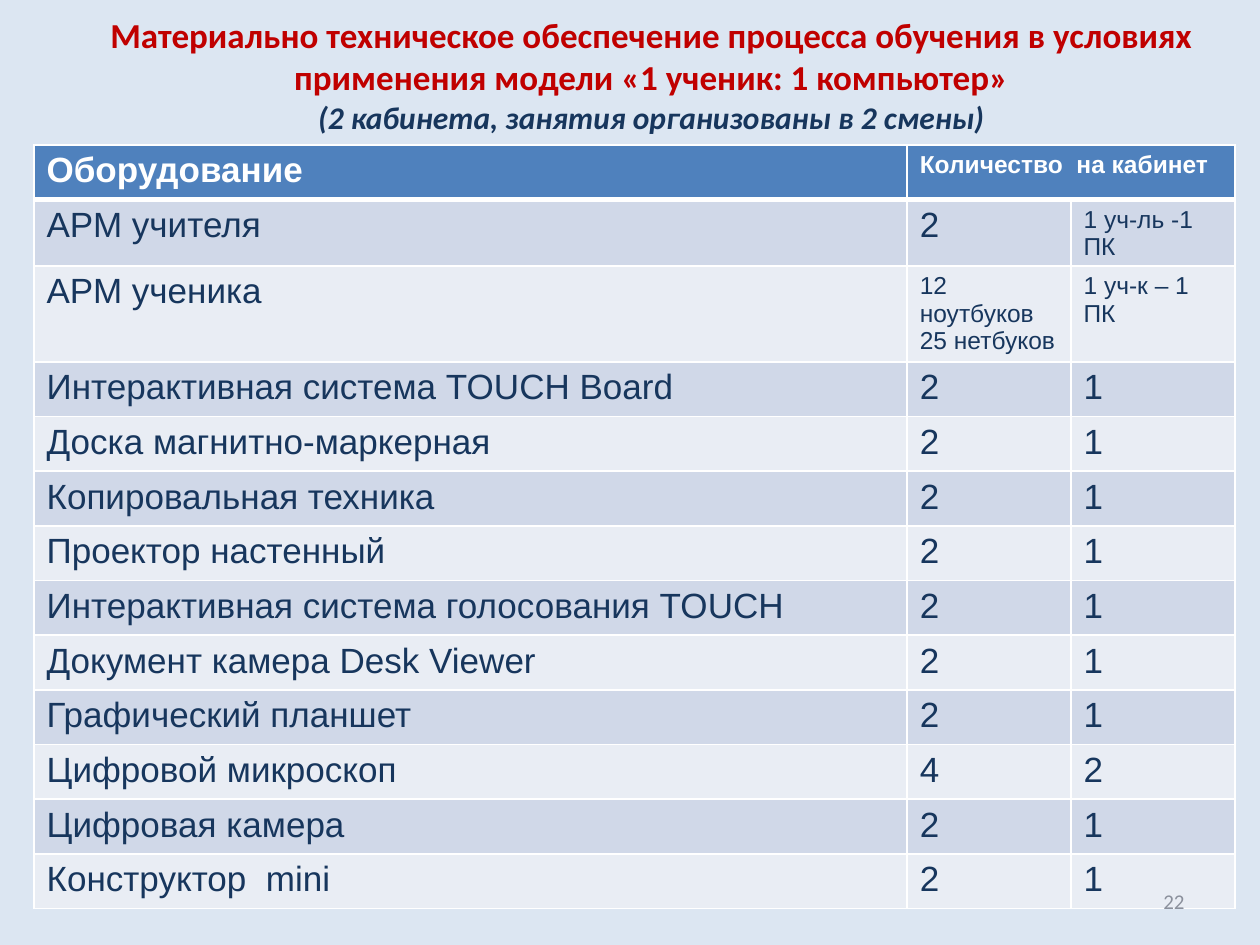
"""Builds the slide listing classroom equipment for the one pupil, one computer model."""
from lxml import etree
from pptx import Presentation
from pptx.dml.color import RGBColor
from pptx.enum.text import MSO_ANCHOR, PP_ALIGN
from pptx.oxml.ns import qn
from pptx.util import Inches, Pt

COLORS = {"backdrop": "DCE6F2", "heading": "C00000", "ink": "17365D", "header": "4F81BD",
          "odd": "D0D8E8", "even": "E9EDF4", "white": "FFFFFF", "number": "8B909C"}
EQUIPMENT = [
    ("Оборудование", "Количество  на кабинет", ""),
    ("АРМ учителя", "2", "1 уч-ль -1 ПК"),
    ("АРМ ученика", "12 ноутбуков\n25 нетбуков", "1 уч-к – 1 ПК"),
    ("Интерактивная система TOUCH Board", "2", "1"),
    ("Доска магнитно-маркерная", "2", "1"),
    ("Копировальная техника", "2", "1"),
    ("Проектор настенный", "2", "1"),
    ("Интерактивная система голосования TOUCH", "2", "1"),
    ("Документ камера Desk Viewer", "2", "1"),
    ("Графический планшет", "2", "1"),
    ("Цифровой микроскоп", "4", "2"),
    ("Цифровая камера", "2", "1"),
    ("Конструктор  mini", "2", "1"),
]
COLUMNS = [6.93, 1.3, 1.3]
ROWS = [0.57 if "\n" in amount else 0.43 for _, amount, _ in EQUIPMENT]


def write(paragraph, text, color, **formats):
    run = paragraph.add_run()
    run.text = text
    run.font.color.rgb = RGBColor.from_string(COLORS[color])
    for attribute, value in formats.items():
        setattr(run.font, attribute, value)


def add_caption(left, top, width, height, anchor):
    frame = slide.shapes.add_textbox(*map(Inches, (left, top, width, height))).text_frame
    settings = {"word_wrap": True, "vertical_anchor": anchor, "margin_top": 0, "margin_bottom": 0}
    for attribute, value in settings.items():
        setattr(frame, attribute, value)
    return frame


deck = Presentation()
deck.slide_width, deck.slide_height = Inches(10), Inches(7.5)
slide = deck.slides.add_slide(deck.slide_layouts[6])
slide.background.fill.solid()
slide.background.fill.fore_color.rgb = RGBColor.from_string(COLORS["backdrop"])

title = add_caption(0.67, 0.11, 9, 1, MSO_ANCHOR.TOP)
heading, subtitle = title.paragraphs[0], title.add_paragraph()
heading.alignment = subtitle.alignment = PP_ALIGN.CENTER
write(heading, "Материально техническое обеспечение процесса обучения в условиях "
      "применения модели «1 ученик: 1 компьютер»", "heading",
      name="Calibri", size=Pt(20), bold=True)
write(subtitle, "(2 кабинета, занятия организованы в 2 смены)", "ink",
      name="Calibri", size=Pt(18), bold=True, italic=True)

table = slide.shapes.add_table(
    len(ROWS), len(COLUMNS), Inches(0.27), Inches(1.15),
    Inches(sum(COLUMNS)), Inches(sum(ROWS))).table
for column, width in zip(table.columns, COLUMNS):
    column.width = Inches(width)
for row, height in zip(table.rows, ROWS):
    row.height = Inches(height)
table.cell(0, 1).merge(table.cell(0, 2))

for r, entries in enumerate(EQUIPMENT):
    band = "header" if r == 0 else "odd" if r % 2 else "even"
    for c, entry in enumerate(entries):
        cell = table.cell(r, c)
        cell.fill.solid()
        cell.fill.fore_color.rgb = RGBColor.from_string(COLORS[band])
        for position, side in enumerate(("lnL", "lnR", "lnT", "lnB")):
            thick = (r == 0 and side == "lnB") or (r == 1 and side == "lnT")
            border = etree.Element(qn(f"a:{side}"), w=str(Pt(3 if thick else 1)))
            paint = etree.SubElement(border, qn("a:solidFill"))
            etree.SubElement(paint, qn("a:srgbClr"), val=COLORS["white"])
            cell._tc.get_or_add_tcPr().insert(position, border)
        small = c > 0 and len(entry) > 1
        cell.margin_bottom = Inches(0.01 if small else 0.05)
        for n, line in enumerate(entry.split("\n") if entry else []):
            paragraph = cell.text_frame.add_paragraph() if n else cell.text_frame.paragraphs[0]
            write(paragraph, line, "ink" if r else "white",
                  name="Arial", size=Pt(14 if small else 20), bold=r == 0)

page = add_caption(7.17, 6.95, 2.33, 0.4, MSO_ANCHOR.MIDDLE).paragraphs[0]
page.alignment = PP_ALIGN.RIGHT
write(page, "22", "number", name="Calibri", size=Pt(12))

deck.save("out.pptx")
